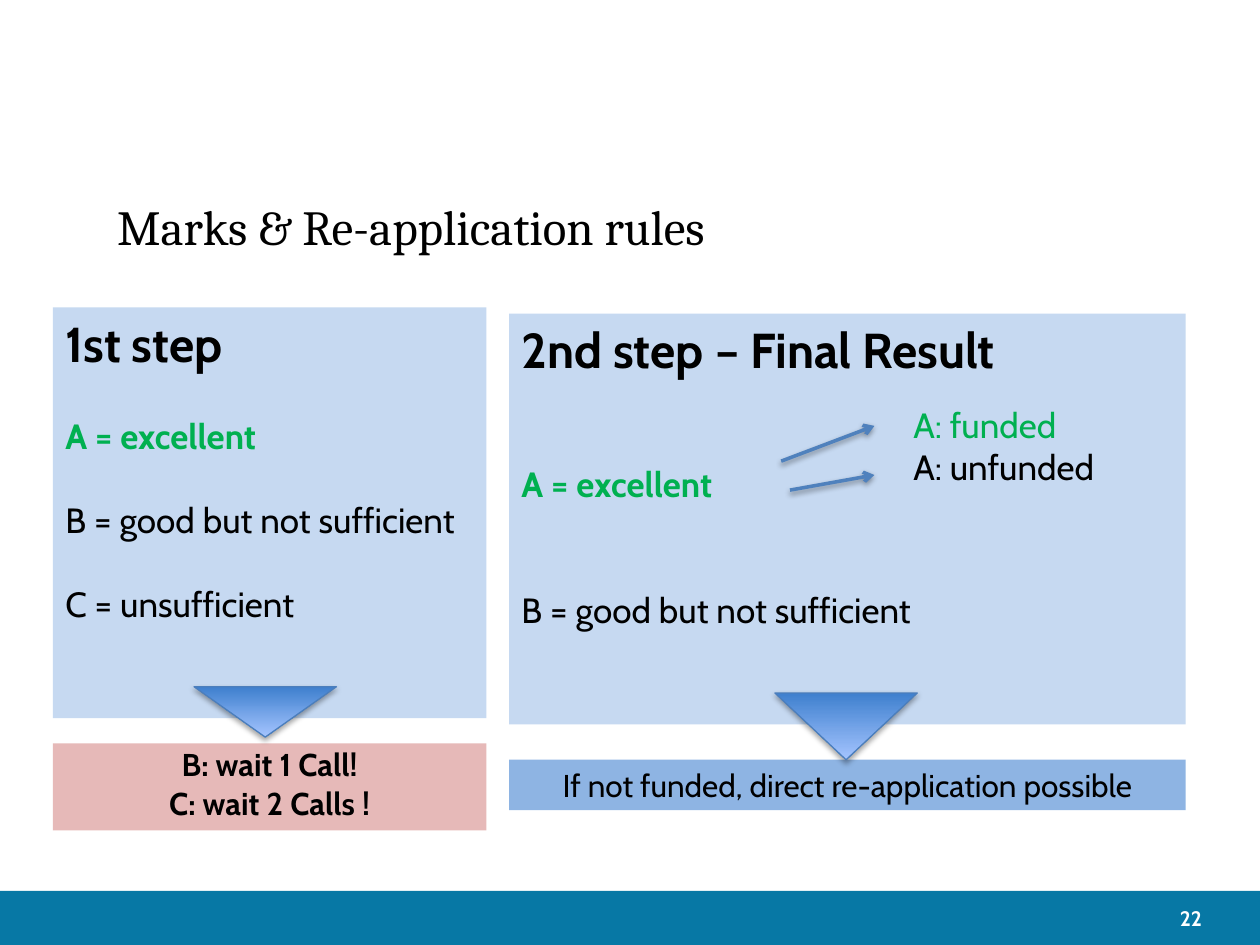
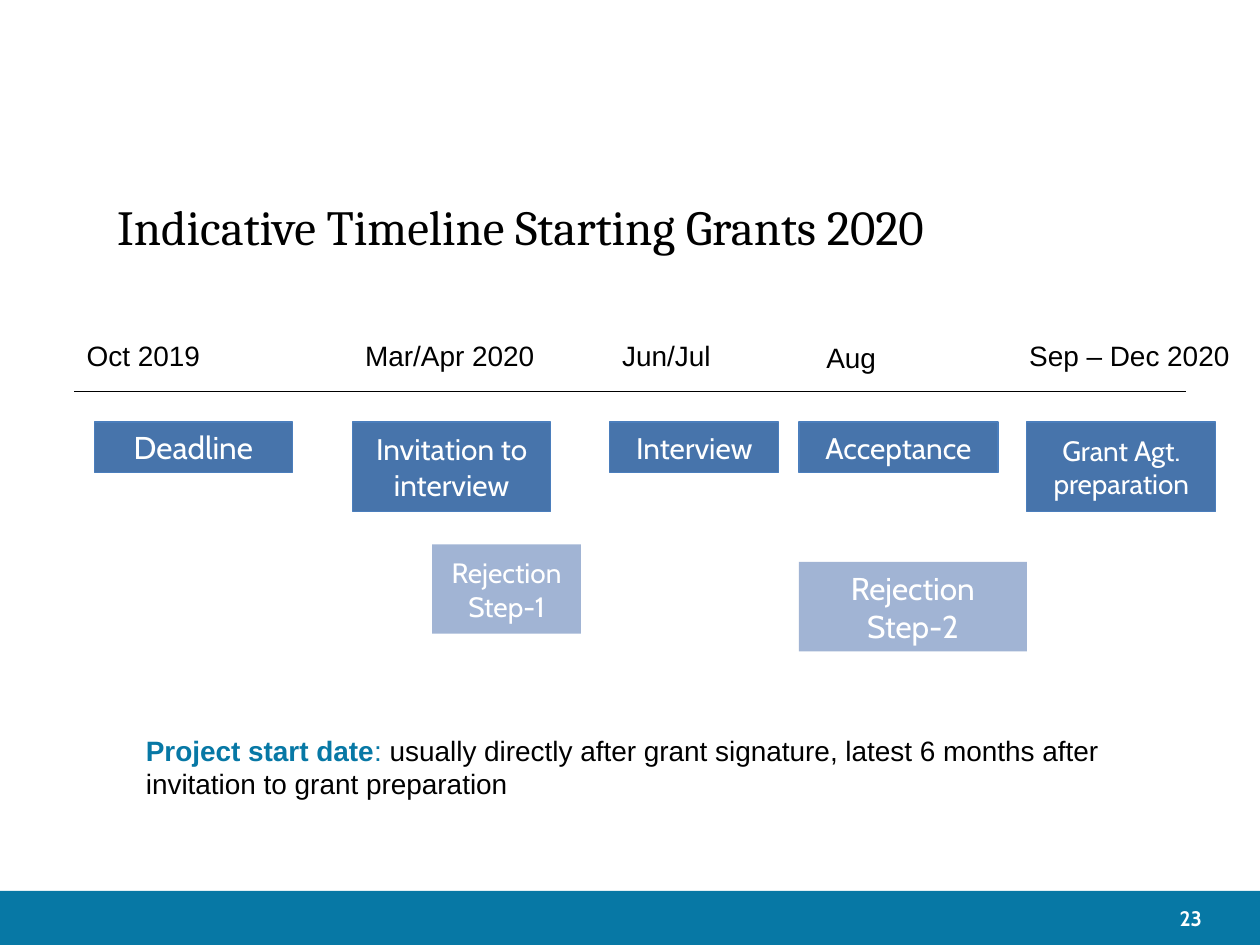
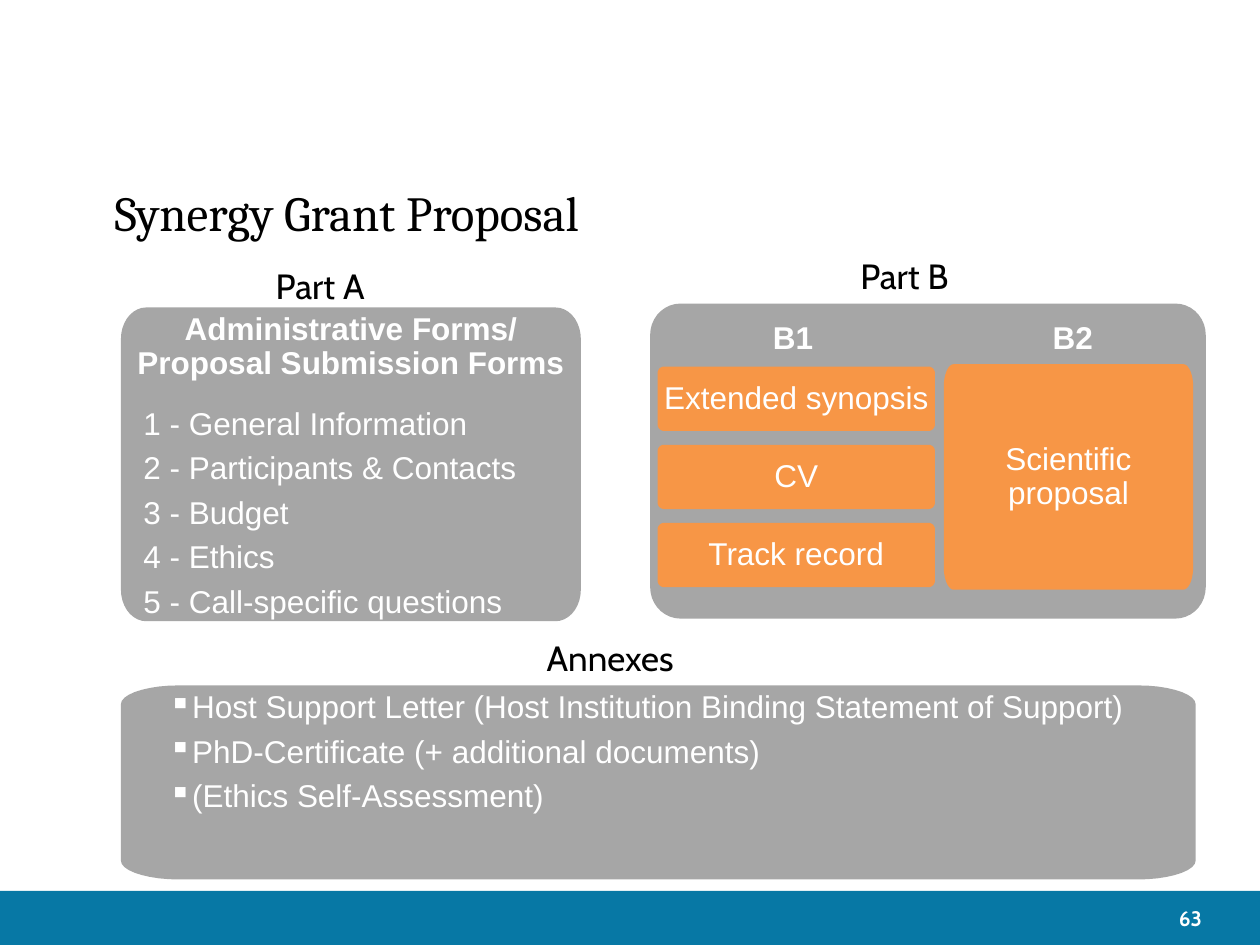
from dataclasses import dataclass
from math import cos, radians, sin

from lxml.etree import SubElement
from pptx import Presentation
from pptx.dml.color import RGBColor
from pptx.enum.shapes import MSO_CONNECTOR, MSO_SHAPE
from pptx.enum.text import MSO_ANCHOR as Anchor, PP_ALIGN as Align
from pptx.oxml.ns import qn
from pptx.util import Inches, Pt


@dataclass(frozen=True)
class Theme:
    black: str = "000000"
    white: str = "FFFFFF"
    teal: str = "0778A5"
    green: str = "00B050"
    pale_blue: str = "C6D9F1"
    mid_blue: str = "8EB4E3"
    pink: str = "E6B9B8"
    arrow: str = "4F81BD"
    outline: str = "4B7EBC"
    pointer_base: str = "3F80CE"
    pointer_tip: str = "A4C4FF"
    milestone: str = "4774AB"
    rejection: str = "A1B4D4"
    gray: str = "A6A6A6"
    orange: str = "F79646"
    heading_font: str = "Cambria"
    label_font: str = "Cabin"
    body_font: str = "Arial"
    heading: int = 28
    large: int = 20
    medium: int = 18
    fitted: int = 17
    small: int = 16
    footer: int = 12


T = Theme()


@dataclass
class Run:
    text: str
    size: int = T.large
    color: str = T.black
    bold: bool = False
    font: str = T.label_font


@dataclass
class Para:
    runs: list
    align: Align = Align.LEFT
    before: float = 0
    after: float = 0
    line: float = 1.0
    margin: float = 0
    indent: float = 0
    bullet: str = ""


def para(text, size=T.large, color=T.black, bold=False, font=T.label_font, **layout):
    return Para([Run(text, size, color, bold, font)], **layout)


def centered(text, size=T.medium, color=T.white, **rest):
    return para(text, size, color, align=Align.CENTER, **rest)


def proposal_text(text, **rest):
    return para(text, T.medium, T.white, font=T.body_font, line=0.9, **rest)


# ---- Marks slide: one gap is the height of a line of large text
GAP = 24
STEPS = [
    ((0.42, 2.44, 3.44, 3.26), [
        para("1st step", T.heading, bold=True),
        para("A = excellent", color=T.green, bold=True, before=GAP),
        para("B = good but not sufficient", before=GAP),
        para("C = unsufficient", before=GAP)]),
    ((4.04, 2.49, 5.37, 3.26), [
        para("2nd step – Final Result", T.heading, bold=True),
        para("A = excellent", color=T.green, bold=True, before=2 * GAP),
        para("B = good but not sufficient", before=2 * GAP)]),
]
CONSEQUENCES = [
    ((0.42, 5.9, 3.44, 0.69), T.pink, [
        centered(text, color=T.black, bold=True, line=0.9, after=2.7)
        for text in ("B: wait 1 Call!", "C: wait 2 Calls !")]),
    ((4.04, 6.03, 5.37, 0.4), T.mid_blue, [
        centered("If not funded, direct re-application possible", color=T.black)]),
]
POINTERS = [(1.54, 5.45, 1.13, 0.4), (6.15, 5.5, 1.13, 0.53)]
OUTCOMES = [para("A: funded", color=T.green), para("A: unfunded")]
OUTCOME_ARROWS = [((6.2, 3.66), (6.94, 3.38)), ((6.27, 3.89), (6.94, 3.77))]

# ---- Timeline slide
ONE_LINE, TWO_LINES = 0.4, 0.71
DATES = [  # text, left, top, width
    ("Oct 2019", 0.59, 2.64, 2.2),
    ("Mar/Apr 2020", 2.8, 2.64, 1.89),
    ("Jun/Jul", 4.84, 2.64, 1.5),
    ("Aug", 6.46, 2.65, 1.46),
    ("Sep – Dec 2020", 8.07, 2.64, 1.93),
]
MILESTONES = [  # text, left, width, height, size
    ("Deadline", 0.75, 1.57, ONE_LINE, T.medium),
    ("Invitation to interview", 2.8, 1.57, TWO_LINES, T.fitted),
    ("Interview", 4.84, 1.34, ONE_LINE, T.fitted),
    ("Acceptance", 6.34, 1.58, ONE_LINE, T.fitted),
    ("Grant Agt. preparation", 8.15, 1.5, TWO_LINES, T.small),
]
REJECTIONS = [  # lines, left, top, width, size, side inset
    (["Rejection Step-1"], 3.43, 4.32, 1.18, T.small, 0),
    (["Rejection", "Step-2"], 6.34, 4.46, 1.81, T.medium, 0.1),
]
START_DATE = [Para([
    Run("Project start date", T.small, T.teal, True, T.body_font),
    Run(": ", T.small, T.teal, font=T.body_font),
    Run("usually directly after grant signature, latest 6 months after "
        "invitation to grant preparation", T.small, font=T.body_font)])]

# ---- Proposal slide
PART_LABELS = [("Part A", 2.09, 2.05, 1.1), ("Part B", 6.73, 1.97, 1.1),
               ("Annexes", 4.24, 5, 1.62)]
FORMS_HEADING = "Administrative Forms/\nProposal Submission Forms"
FORMS = ["General Information", "Participants & Contacts", "Budget", "Ethics",
         "Call-specific questions"]
B1_SECTIONS = ["Extended synopsis", "CV", "Track record"]
B2_SECTION = ["Scientific", "proposal"]
B_HEADINGS = [("B1", 6.03), ("B2", 8.25)]
ANNEXES = ["Host Support Letter (Host Institution Binding Statement of Support)",
           "PhD-Certificate (+ additional documents)",
           "(Ethics Self-Assessment)"]


def rgb(color):
    return RGBColor.from_string(color)


def inches(box):
    return [Inches(value) for value in box]


def write(shape, paras, anchor=Anchor.TOP, wrap=True, inset=(0.1, 0.05)):
    frame = shape.text_frame
    frame.word_wrap = wrap
    frame.vertical_anchor = anchor
    frame.margin_left = frame.margin_right = Inches(inset[0])
    frame.margin_top = frame.margin_bottom = Inches(inset[1])
    for index, item in enumerate(paras):
        p = frame.add_paragraph() if index else frame.paragraphs[0]
        p.alignment = item.align
        p.line_spacing = item.line
        p.space_before, p.space_after = Pt(item.before), Pt(item.after)
        props = p._p.get_or_add_pPr()
        if item.margin or item.indent:
            props.set("marL", str(Inches(item.margin)))
            props.set("indent", str(Inches(item.indent)))
        if item.bullet:
            SubElement(props, qn("a:buChar"), char=item.bullet)
        for source in item.runs:
            for number, line in enumerate(source.text.split("\n")):
                if number:
                    p.add_line_break()
                run = p.add_run()
                run.text = line
                run.font.name, run.font.size = source.font, Pt(source.size)
                run.font.bold = source.bold
                run.font.color.rgb = rgb(source.color)


def paint(shape, fill, outline=None):
    shape.shadow.inherit = False
    shape.fill.solid()
    shape.fill.fore_color.rgb = rgb(fill)
    if outline:
        shape.line.color.rgb = rgb(outline)
        shape.line.width = Pt(0.75)
    else:
        shape.line.fill.background()


def add_box(slide, box, fill, paras=(), outline=None, **text_layout):
    shape = slide.shapes.add_shape(MSO_SHAPE.RECTANGLE, *inches(box))
    paint(shape, fill, outline)
    write(shape, paras, **text_layout)


def add_label(slide, box, paras, **text_layout):
    write(slide.shapes.add_textbox(*inches(box)), paras, **text_layout)


def add_panel(slide, box, radii, fill, paras=(), **text_layout):
    """Rectangle whose corners are quarter ellipses with the given x and y radii."""
    left, top, width, height = box
    rx, ry = radii
    right, bottom = left + width - rx, top + height - ry
    centers = [(right, bottom), (left + rx, bottom), (left + rx, top + ry), (right, top + ry)]
    points = [(Inches(x + rx * cos(radians(angle))), Inches(y + ry * sin(radians(angle))))
              for quarter, (x, y) in enumerate(centers)
              for angle in range(90 * quarter, 90 * quarter + 91, 10)]
    builder = slide.shapes.build_freeform(*points[0])
    builder.add_line_segments(points[1:], close=True)
    shape = builder.convert_to_shape()
    paint(shape, fill)
    write(shape, paras, **text_layout)


def add_line(slide, start, end, color, width):
    line = slide.shapes.add_connector(MSO_CONNECTOR.STRAIGHT, *inches(start + end))
    line.line.color.rgb = rgb(color)
    line.line.width = Pt(width)
    return line


def add_pointer(slide, box):
    """Downward triangle that keeps the theme's soft shadow."""
    shape = slide.shapes.add_shape(MSO_SHAPE.ISOSCELES_TRIANGLE, *inches(box))
    shape.rotation = 180
    shape.fill.gradient()
    shape.fill.gradient_angle = 90
    for stop, color in zip(shape.fill.gradient_stops, (T.pointer_base, T.pointer_tip)):
        stop.color.rgb = rgb(color)
    shape.line.color.rgb = rgb(T.outline)
    shape.line.width = Pt(0.75)


def new_slide(deck, title, number, left=0.83, top=1.5):
    slide = deck.slides.add_slide(deck.slide_layouts[5])
    add_box(slide, (0, 7.07, 10, 0.43), T.teal)
    add_label(slide, (6.98, 7.08, 2.56, 0.42),
              [para(str(number), T.footer, T.white, True, align=Align.RIGHT)],
              anchor=Anchor.MIDDLE, inset=(0, 0))
    heading = slide.shapes.title
    heading.left, heading.top, heading.width, heading.height = inches((left, top, 8.72, 0.58))
    write(heading, [para(title, T.heading, font=T.heading_font)], anchor=Anchor.MIDDLE)
    return slide


def build_marks(deck):
    slide = new_slide(deck, "Marks & Re-application rules", 22)
    for box, fill, paras in CONSEQUENCES:
        add_box(slide, box, fill, paras)
    for box, paras in STEPS:
        add_box(slide, box, T.pale_blue, paras)
    add_label(slide, (7.15, 3.15, 1.9, 0.77), OUTCOMES)
    for start, end in OUTCOME_ARROWS:
        arrow = add_line(slide, start, end, T.arrow, 2)
        SubElement(arrow.line._get_or_add_ln(), qn("a:tailEnd"), type="arrow")
    for box in POINTERS:
        add_pointer(slide, box)


def build_timeline(deck):
    slide = new_slide(deck, "Indicative Timeline Starting Grants 2020", 23)
    axis = add_line(slide, (0.59, 3.11), (9.41, 3.11), T.black, 0.75)
    SubElement(axis._element.spPr, qn("a:effectLst"))
    for text, left, top, width in DATES:
        add_label(slide, (left, top, width, 0.37), [para(text, T.small, font=T.body_font)])
    for text, left, width, height, size in MILESTONES:
        add_box(slide, (left, 3.35, width, height), T.milestone, [centered(text, size)],
                outline=T.outline, anchor=Anchor.MIDDLE)
    for lines, left, top, width, size, side in REJECTIONS:
        add_box(slide, (left, top, width, TWO_LINES), T.rejection,
                [centered(line, size) for line in lines],
                anchor=Anchor.MIDDLE, inset=(side, 0.05))
    add_label(slide, (1.06, 5.77, 7.97, 0.64), START_DATE)


def build_proposal(deck):
    slide = new_slide(deck, "Synergy Grant Proposal", 63, left=0.81, top=1.39)
    middle = dict(anchor=Anchor.MIDDLE, wrap=False)

    heading = proposal_text(FORMS_HEADING, bold=True, align=Align.CENTER, after=3)
    forms = [proposal_text(f"{number} - {form}", margin=0.08, after=6,
                           before=12 if number == 1 else 0)
             for number, form in enumerate(FORMS, 1)]
    add_panel(slide, (0.96, 2.44, 3.65, 2.49), (0.2, 0.25), T.gray, [heading] + forms)

    add_panel(slide, (5.16, 2.41, 4.41, 2.5), (0.24, 0.25), T.gray)
    for row, section in enumerate(B1_SECTIONS):
        add_panel(slide, (5.22, 2.91 + 0.62 * row, 2.2, 0.51), (0.05, 0.05), T.orange,
                  [proposal_text(section, align=Align.CENTER)], **middle)
    add_panel(slide, (7.49, 2.89, 1.98, 1.79), (0.08, 0.18), T.orange,
              [proposal_text(line, align=Align.CENTER) for line in B2_SECTION], **middle)
    for text, left in B_HEADINGS:
        add_label(slide, (left, 2.44, 0.53, 0.51),
                  [proposal_text(text, bold=True, align=Align.CENTER)], **middle)

    add_panel(slide, (0.96, 5.44, 8.53, 1.54), (0.46, 0.15), T.gray,
              [proposal_text(annex, margin=0.08, indent=0.2, after=6, bullet="▪")
               for annex in ANNEXES])
    for text, left, top, width in PART_LABELS:
        add_label(slide, (left, top, width, 0.44), [para(text)])


def main():
    deck = Presentation()
    deck.slide_width, deck.slide_height = Inches(10), Inches(7.5)
    build_marks(deck)
    build_timeline(deck)
    build_proposal(deck)
    deck.save("out.pptx")


if __name__ == "__main__":
    main()
